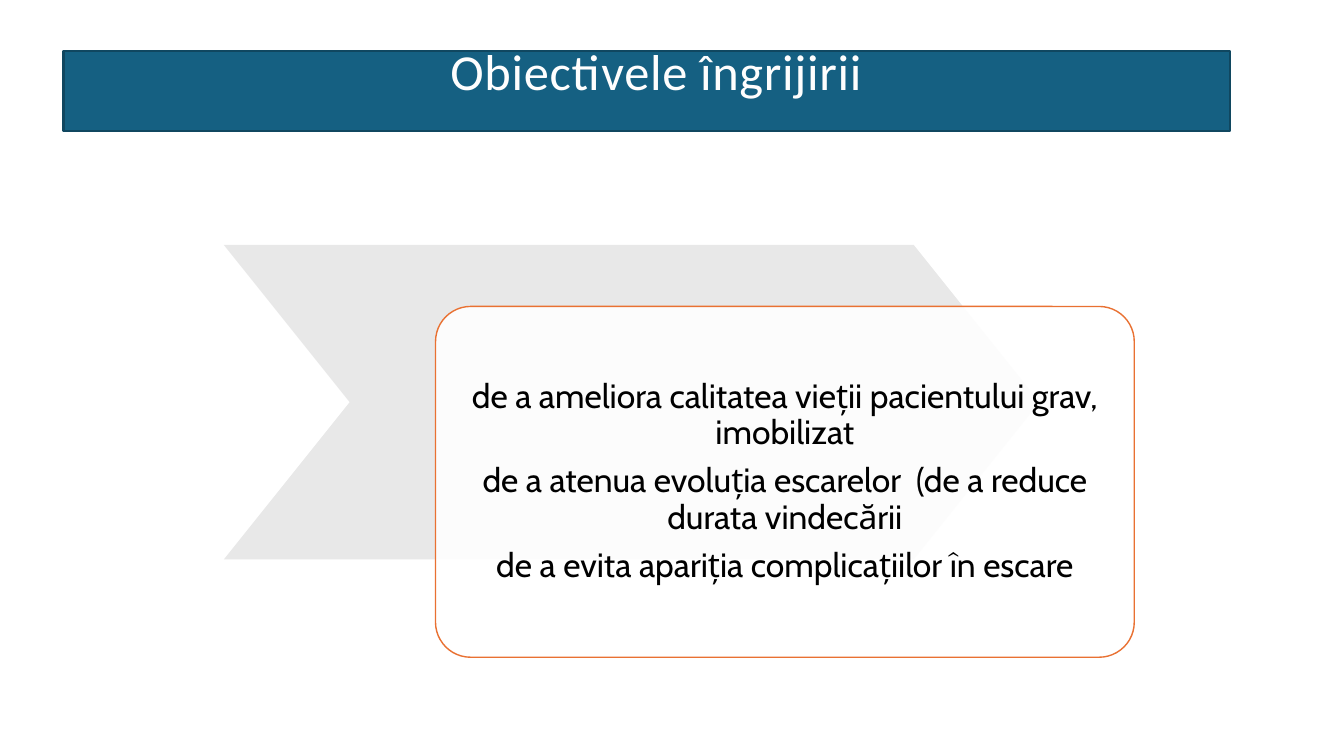
from pptx import Presentation
from pptx.dml.color import RGBColor
from pptx.enum.shapes import MSO_SHAPE
from pptx.enum.text import MSO_ANCHOR, MSO_AUTO_SIZE, PP_ALIGN
from pptx.oxml.ns import qn
from pptx.util import Inches, Pt
from lxml.etree import SubElement

AIMS = [
    "de a ameliora calitatea vieții pacientului grav, imobilizat",
    "de a atenua evoluția escarelor  (de a reduce durata vindecării",
    "de a evita apariția complicațiilor în escare",
]


def tint(form, color):
    form.fore_color.rgb = RGBColor.from_string(color)


def paint(shape, fill, line=None, width=1, alpha=None):
    shape.fill.solid()
    tint(shape.fill, fill)
    if alpha is not None:
        color = shape.fill._xPr.find(qn("a:solidFill"))[0]
        SubElement(color, qn("a:alpha")).set("val", str(alpha * 1000))
    if line:
        shape.line.fill.solid()
        tint(shape.line.fill, line)
        shape.line.width = Pt(width)
    else:
        shape.line.fill.background()


def write(shape, lines, font, size, color, anchor, insets, leading, after=0, spacing=None):
    """Fill a shape with centred paragraphs; insets are left, top, right, bottom."""
    frame = shape.text_frame
    frame.word_wrap = True
    frame.auto_size = MSO_AUTO_SIZE.NONE
    frame.vertical_anchor = anchor
    (frame.margin_left, frame.margin_top,
     frame.margin_right, frame.margin_bottom) = map(Inches, insets)
    for i, line in enumerate(lines):
        para = frame.add_paragraph() if i else frame.paragraphs[0]
        para.alignment = PP_ALIGN.CENTER
        para.line_spacing = leading
        para.space_before, para.space_after = Pt(0), Pt(after)
        run = para.add_run()
        run.text = line
        run.font.name, run.font.size = font, Pt(size)
        run.font.color.rgb = RGBColor.from_string(color)
        if spacing:
            run.font._element.set("spc", str(int(spacing * 100)))


def draw(slide, kind, adjust, box):
    shape = slide.shapes.add_shape(kind, *map(Inches, box))
    shape.shadow.inherit = False
    shape.adjustments[0] = adjust
    return shape


def banner(slide, x, y, w, h):
    title = slide.shapes.title
    title.left, title.top, title.width, title.height = map(Inches, (x, y, w, h))
    paint(title, "156082", "104760", 1.5)
    write(title, ["Obiectivele îngrijirii"], "Calibri", 36, "FEFEFE", MSO_ANCHOR.TOP,
          (0.29, 0.05, 0.1, 0.05), 0.7, spacing=0.5)


def panel(slide, x, y, w, h):
    """Chevron at the top left with the card of aims overlapping it."""
    arrow = draw(slide, MSO_SHAPE.CHEVRON, 0.4, (x, y, 8.09, 3.12))
    paint(arrow, "E8E8E8")
    wide, high = 6.93, 3.48
    card = draw(slide, MSO_SHAPE.ROUNDED_RECTANGLE, 0.1,
                (x + w - wide, y + h - high, wide, high))
    paint(card, "FFFFFF", "E97132", alpha=90)
    write(card, AIMS, "Cabin", 24, "000000", MSO_ANCHOR.MIDDLE, (0.19,) * 4, 0.9, after=8.4)


def main():
    deck = Presentation()
    deck.slide_width, deck.slide_height = Inches(13.33), Inches(7.5)
    slide = deck.slides.add_slide(deck.slide_layouts.get_by_name("Title Only"))
    banner(slide, 0.63, 0.51, 11.57, 0.79)
    panel(slide, 2.22, 2.43, 9.03, 4.09)
    deck.save("out.pptx")


if __name__ == "__main__":
    main()
